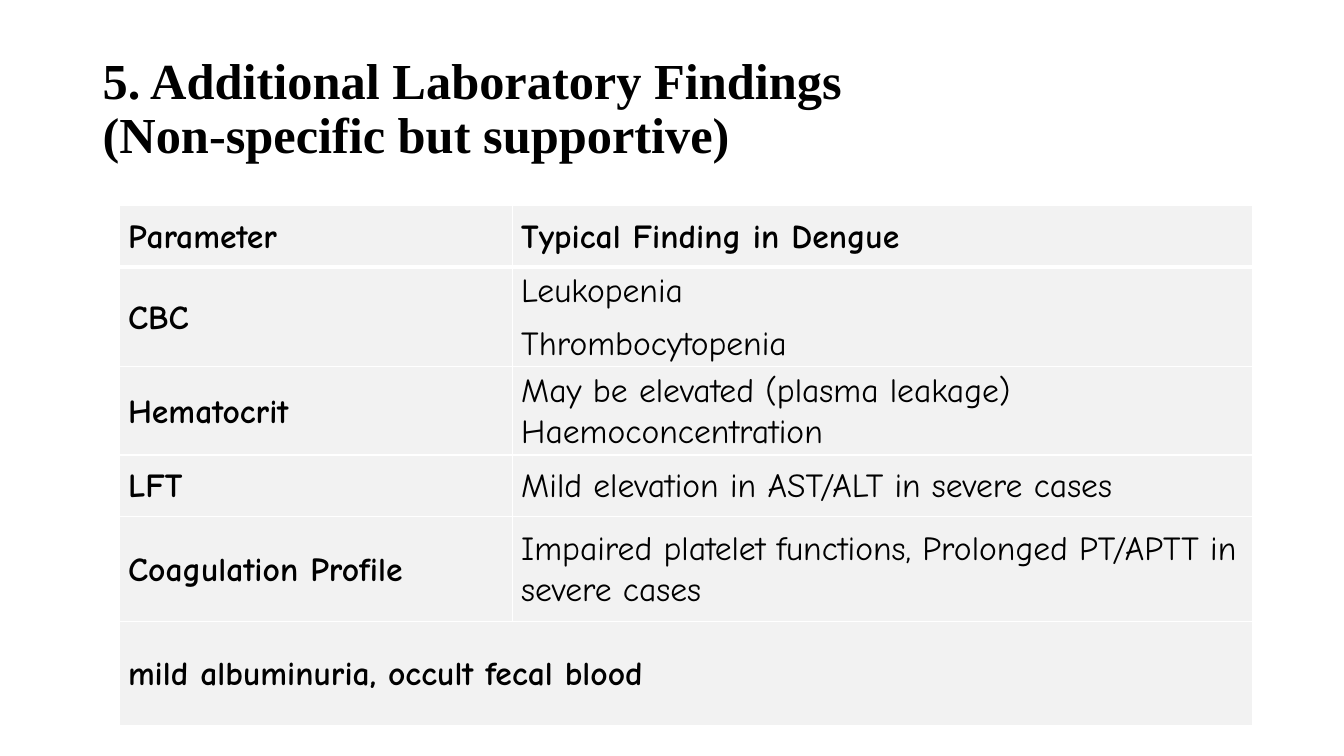
from dataclasses import dataclass

from pptx import Presentation
from pptx import util as u
from pptx.dml.color import RGBColor
from pptx.enum import text
from pptx.oxml import parse_xml
from pptx.oxml.ns import nsdecls


@dataclass(frozen=True)
class Theme:
    ink: str = "000000"
    cell: str = "F2F2F2"
    rule: str = "FFFFFF"
    title_font: str = "Times New Roman"
    body_font: str = "Comic Neue"
    title_size: int = 36
    body_size: int = 24
    rule_width: int = 1
    header_rule_width: int = 3


TITLE = "5. Additional Laboratory Findings \n(Non-specific but supportive)"
FINDINGS = [
    ("Parameter", ["Typical Finding in Dengue"]),
    ("CBC", ["Leukopenia", "Thrombocytopenia"]),
    ("Hematocrit", ["May be elevated (plasma leakage) Haemoconcentration"]),
    ("LFT", ["Mild elevation in AST/ALT in severe cases"]),
    ("Coagulation Profile",
     ["Impaired platelet functions, Prolonged PT/APTT in severe cases"]),
    ("mild albuminuria, occult fecal blood", None),
]
COLUMN_WIDTHS = [3.9, 7.34]
ROW_HEIGHTS = [0.61] * 4 + [1.04] * 2


def apply(target, values):
    for name, value in values.items():
        setattr(target, name, value)


class SlideBuilder:
    def __init__(self, s, theme):
        self.s = s
        self.theme = theme

    def paragraph(self, p, words, font, size, bold, **spacing):
        p.text = words
        apply(p, spacing)
        for r in p.runs:
            apply(r.font, {"name": font, "size": u.Pt(size), "bold": bold})
            r.font.color.rgb = RGBColor.from_string(self.theme.ink)

    def title(self, words, left, top, width, height):
        sp = self.s.shapes.add_textbox(*map(u.Inches, (left, top, width, height)))
        tf = sp.text_frame
        apply(tf, {"word_wrap": True, "vertical_anchor": text.MSO_ANCHOR.MIDDLE})
        self.paragraph(tf.paragraphs[0], words, self.theme.title_font,
                       self.theme.title_size, True, line_spacing=0.9)

    def borders(self, cell, bottom_width):
        """Draw the four cell edges, which must precede the fill in the XML."""
        tcPr = cell._tc.get_or_add_tcPr()
        for i, side in enumerate("LRTB"):
            width = bottom_width if side == "B" else self.theme.rule_width
            tcPr.insert(i, parse_xml(
                f'<a:ln{side} {nsdecls("a")} w="{u.Pt(width)}"><a:solidFill>'
                f'<a:srgbClr val="{self.theme.rule}"/></a:solidFill></a:ln{side}>'))

    def cell(self, cell, lines, bold, bottom_width):
        apply(cell, {"vertical_anchor": text.MSO_ANCHOR.MIDDLE,
                     **{f"margin_{side}": u.Inches(0.01)
                        for side in ("left", "right", "top", "bottom")}})
        cell.fill.solid()
        cell.fill.fore_color.rgb = RGBColor.from_string(self.theme.cell)
        self.borders(cell, bottom_width)
        tf = cell.text_frame
        for i, line in enumerate(lines):
            p = tf.add_paragraph() if i else tf.paragraphs[0]
            self.paragraph(p, line, self.theme.body_font, self.theme.body_size,
                           bold, line_spacing=1.07, space_after=u.Pt(8))
            p._p.get_or_add_pPr().set("marL", str(u.Inches(0.08)))

    def table(self, rows, left, top, widths, heights):
        """Build a two-column table; a row without findings spans both columns."""
        box = (left, top, sum(widths), sum(heights))
        table = self.s.shapes.add_table(
            len(rows), len(widths), *map(u.Inches, box)).table
        for column, width in zip(table.columns, widths):
            column.width = u.Inches(width)
        for row, height in zip(table.rows, heights):
            row.height = u.Inches(height)
        for i, (parameter, findings) in enumerate(rows):
            header = i == 0
            bottom = self.theme.header_rule_width if header else self.theme.rule_width
            name, finding = table.cell(i, 0), table.cell(i, 1)
            if findings is None:
                name.merge(finding)
            self.cell(name, [parameter], True, bottom)
            self.cell(finding, findings or [], header, bottom)


def main():
    prs = Presentation()
    apply(prs, {"slide_width": u.Inches(13.33), "slide_height": u.Inches(7.5)})
    s = prs.slides.add_slide(prs.slide_layouts[6])
    builder = SlideBuilder(s, Theme())
    builder.title(TITLE, 0.92, 0.48, 11.5, 1.23)
    builder.table(FINDINGS, 1.18, 2.04, COLUMN_WIDTHS, ROW_HEIGHTS)
    prs.save("out.pptx")


if __name__ == "__main__":
    main()
